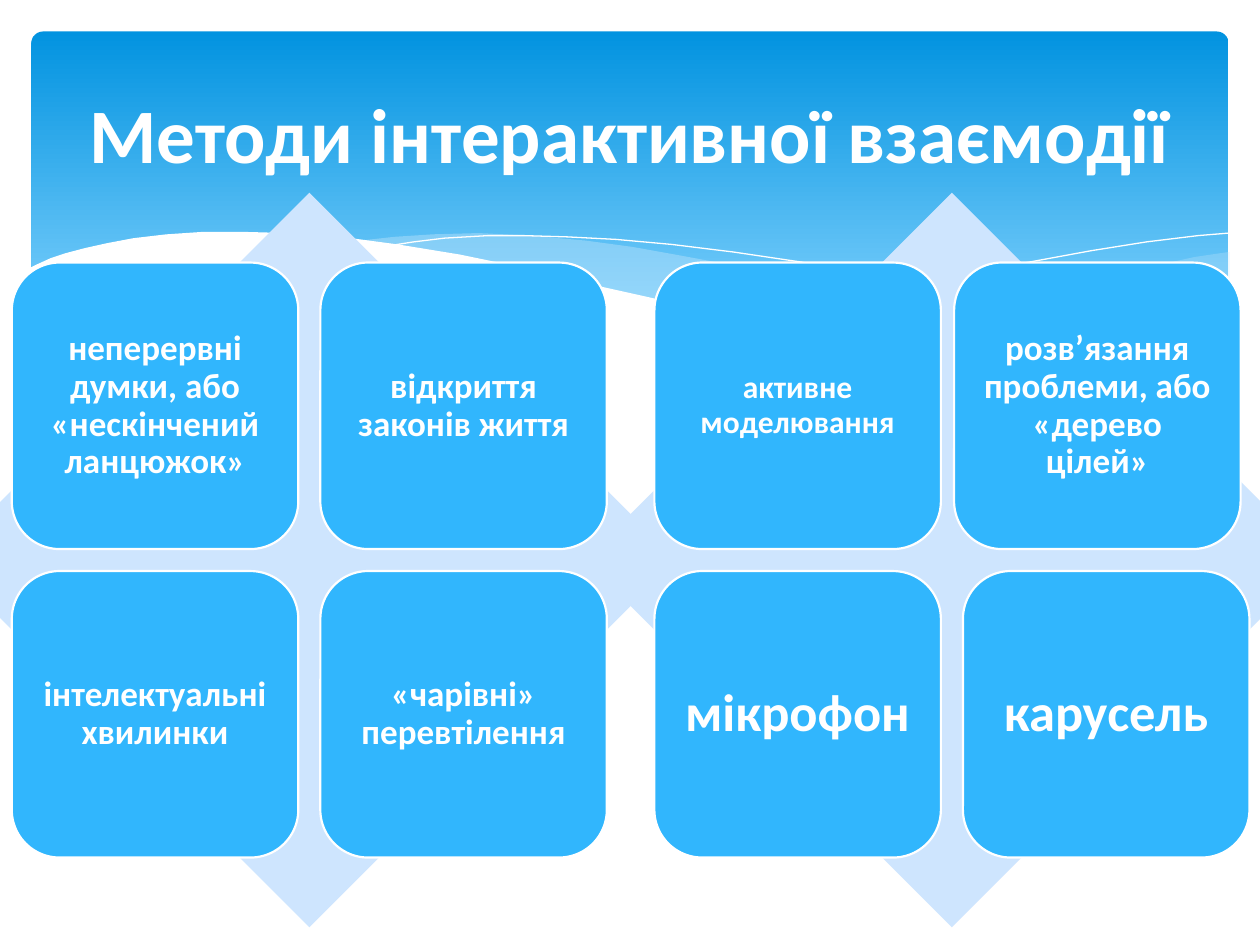
import pptx
import pptx.util
import pptx.dml.color
import pptx.enum.shapes
import pptx.enum.text
import pptx.oxml.ns
import lxml.etree

Inches, Pt = pptx.util.Inches, pptx.util.Pt
RGB = pptx.dml.color.RGBColor
KIND = pptx.enum.shapes.MSO_SHAPE
ALIGN = pptx.enum.text.PP_ALIGN
ANCHOR = pptx.enum.text.MSO_ANCHOR

WHITE = RGB(0xFF, 0xFF, 0xFF)
DEEP = RGB(0x02, 0x93, 0xE0)
SKY = RGB(0x83, 0xD3, 0xFE)
MIST = RGB(0xC6, 0xE7, 0xFC)
PALE = RGB(0xCE, 0xE5, 0xFE)
TILE = RGB(0x31, 0xB6, 0xFD)

WIDTH, HEIGHT = Inches(10), Inches(7.5)
UNIT = WIDTH // 1000  # wave points are thousandths of the slide width

# Each matrix is a square; its tiles are placed by shares of its side
SIDE = Inches(5.83)
TOP = Inches(1.53)
LEFTS = Inches(-0.46), Inches(4.64)
EDGE, STEP, SIZE = 0.095, 0.42, 0.39

# Per matrix: text, column, row, font size, inset, shift to the right
GROUPS = [
    [("неперервні думки, або «нескінчений ланцюжок»", 0, 0, 20, 0.08, 0),
     ("відкриття законів життя", 1, 0, 20, 0.08, 0),
     ("інтелектуальні хвилинки", 0, 1, 20, 0.08, 0),
     ("«чарівні» перевтілення", 1, 1, 20, 0.08, 0)],
    [("активне моделювання", 0, 0, 18, 0.07, 0),
     ("розв’язання проблеми, або «дерево цілей»", 1, 0, 20, 0.08, -0.07),
     ("мікрофон", 0, 1, 30, 0.12, 0),
     ("карусель", 1, 1, 30, 0.12, 0)],
]

# Waves: points, fill opacity in percent (None for an open white line)
RIGHT = [(975, 200), (948, 204), (921, 210), (891, 216), (861, 223),
         (805, 237), (753, 248), (706, 257), (661, 265), (691, 269),
         (719, 272), (745, 275), (781, 277), (814, 278), (844, 277),
         (872, 274), (897, 270), (921, 265), (942, 259), (963, 252),
         (976, 247), (976, 200)]
BAND = [(893, 273), (866, 269), (837, 265), (775, 254), (706, 240),
        (629, 222), (584, 211), (541, 203), (502, 196), (465, 191),
        (420, 187), (380, 185), (344, 186), (313, 188), (286, 191),
        (323, 196), (362, 203), (404, 211), (449, 222), (530, 240),
        (601, 255), (650, 264), (695, 270), (736, 275), (773, 277),
        (818, 278), (857, 277), (893, 273)]
CREST = [(309, 195), (328, 192), (353, 189), (387, 187), (416, 187),
         (450, 188), (489, 190), (533, 194), (582, 200), (636, 208),
         (695, 219), (760, 233), (831, 251), (907, 272)]
RISE = [(613, 257), (653, 246), (695, 235), (748, 223), (806, 210),
        (866, 199), (910, 192), (951, 187), (975, 185)]
FRONT = [(977, 246), (950, 256), (920, 265), (887, 271), (850, 275),
         (809, 277), (761, 275), (708, 270), (648, 262), (579, 250),
         (529, 239), (475, 227), (418, 213), (365, 202), (316, 194),
         (271, 188), (230, 185), (193, 184), (161, 184), (132, 186),
         (106, 189), (85, 193), (67, 197), (52, 201), (40, 205),
         (29, 210), (23, 213), (23, 329), (977, 329)]
WAVES = [(RIGHT, 29), (BAND, 40), (CREST, None), (RISE, None), (FRONT, 100)]


def put(item, values):
    for name, value in values.items():
        setattr(item, name, value)


def paint(shape, fill, line=None):
    shape.shadow.inherit = False
    shape.fill.solid()
    shape.fill.fore_color.rgb = fill
    if line is None:
        shape.line.fill.background()
    else:
        shape.line.color.rgb = line
        shape.line.width = Pt(1.25)


def write(shape, text, size, inset, space):
    frame = shape.text_frame
    sides = "margin_left", "margin_right", "margin_top", "margin_bottom"
    put(frame, dict.fromkeys(sides, Inches(inset)))
    put(frame, {"word_wrap": True, "vertical_anchor": ANCHOR.MIDDLE})
    para = frame.paragraphs[0]
    put(para, {"alignment": ALIGN.CENTER, "line_spacing": space})
    run = para.add_run()
    run.text = text
    put(run.font, {"name": "Calibri", "size": Pt(size), "bold": True})
    run.font.color.rgb = WHITE


def panel(shapes):
    side = WIDTH // 40
    box = shapes.add_shape(KIND.ROUNDED_RECTANGLE, side, side,
                           WIDTH - 2 * side, Inches(2.7))
    box.adjustments[0] = 0.034
    paint(box, WHITE)
    box.fill.gradient()
    box.fill.gradient_angle = 270
    for stop, (place, tint) in zip(box.fill.gradient_stops,
                                   [(0, DEEP), (0.9, SKY)]):
        stop.position = place
        stop.color.rgb = tint


def wave(shapes, points, alpha):
    path = shapes.build_freeform(*points[0], scale=UNIT)
    path.add_line_segments(points[1:], close=alpha is not None)
    shape = path.convert_to_shape()
    if alpha is None:
        paint(shape, WHITE, WHITE)
        shape.fill.background()
        shape.line.width = Pt(0)
        return
    paint(shape, WHITE if alpha == 100 else MIST)
    if alpha < 100:
        qn = pptx.oxml.ns.qn
        tint = shape.fill._xPr.find(".//" + qn("a:srgbClr"))
        lxml.etree.SubElement(tint, qn("a:alpha"), val=str(alpha * 1000))


def matrix(shapes, left, tiles):
    back = shapes.add_shape(KIND.DIAMOND, left, TOP, SIDE, SIDE)
    paint(back, PALE)
    size = int(SIDE * SIZE)
    for text, col, row, points, inset, shift in tiles:
        x = left + int(SIDE * (EDGE + STEP * col)) + Inches(shift)
        y = TOP + int(SIDE * (EDGE + STEP * row))
        tile = shapes.add_shape(KIND.ROUNDED_RECTANGLE, x, y, size, size)
        paint(tile, TILE, WHITE)
        write(tile, text, points, inset, 0.9)


def title(shapes, text):
    box = shapes.add_textbox(WIDTH // 20, Inches(0.37),
                             WIDTH * 9 // 10, Inches(1.37))
    write(box, text, 44, 0.1, 1.0)


def main():
    deck = pptx.Presentation()
    put(deck, {"slide_width": WIDTH, "slide_height": HEIGHT})
    shapes = deck.slides.add_slide(deck.slide_layouts[6]).shapes
    # Header with waves
    panel(shapes)
    for points, alpha in WAVES:
        wave(shapes, points, alpha)
    # Title and the two matrices
    title(shapes, "Методи інтерактивної взаємодії")
    for left, tiles in zip(LEFTS, GROUPS):
        matrix(shapes, left, tiles)
    deck.save("out.pptx")


if __name__ == "__main__":
    main()
